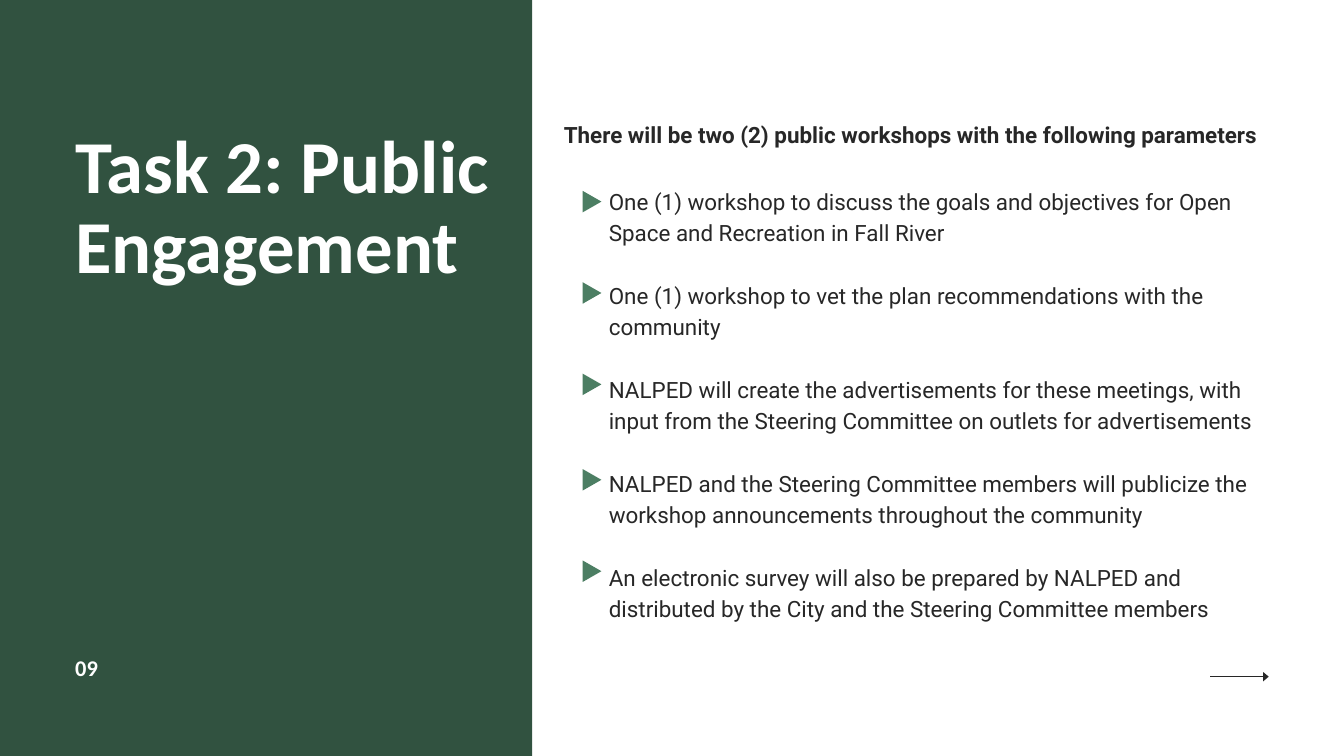
from dataclasses import dataclass
from lxml.etree import SubElement
from pptx import Presentation
from pptx.dml.color import RGBColor
from pptx.enum.shapes import MSO_CONNECTOR, MSO_SHAPE
from pptx.oxml.ns import qn
from pptx.util import Inches, Pt

WIDE, HIGH = Inches(20), Inches(11.25)
COL, ROW = WIDE / 80, HIGH / 45


@dataclass(frozen=True)
class Theme:
    """Colours, fonts, type sizes and line pitches."""
    panel: str = "315240"
    mark: str = "4C7E63"
    ink: str = "272727"
    paper: str = "FFFFFF"
    head: str = "Calibri"
    body: str = "Roboto"
    big: float = 80
    small: float = 24
    title: float = 85.6
    lead: float = 33.6
    page: float = 25.7


@dataclass(frozen=True)
class Box:
    """A box measured in grid columns and rows."""
    left: float
    top: float
    width: float
    height: float

    def inner(self, left, top, width, height):
        """Return a box placed from this box's corner."""
        return Box(self.left + left, self.top + top, width, height)

    def size(self):
        """Return left, top, width and height in slide units."""
        return (round(self.left * COL), round(self.top * ROW),
                round(self.width * COL), round(self.height * ROW))


THEME = Theme()
TITLE = "Task 2: Public Engagement"
LEAD = "There will be two (2) public workshops with the following parameters"
ITEMS = (
    "One (1) workshop to discuss the goals and objectives for Open Space and Recreation in Fall River",
    "One (1) workshop to vet the plan recommendations with the community",
    "NALPED will create the advertisements for these meetings, with input from the Steering Committee on outlets for advertisements",
    "NALPED and the Steering Committee members will publicize the workshop announcements throughout the community",
    "An electronic survey will also be prepared by NALPED and distributed by the City and the Steering Committee members",
)
MARKS = (11.44, 16.88, 22.32, 28, 33.44)


def add_text(slide, box, lines, font, size, pitch, color, bold=False, gap=0):
    """Write one paragraph per line at a fixed pitch."""
    frame = slide.shapes.add_textbox(*box.size()).text_frame
    frame.word_wrap = True
    frame.margin_left = frame.margin_right = 0
    frame.margin_top = frame.margin_bottom = 0
    for index, line in enumerate(lines):
        para = frame.add_paragraph() if index else frame.paragraphs[0]
        para.line_spacing = Pt(pitch)
        para.space_before = Pt(gap if index else 0)
        run = para.add_run()
        run.text = line
        run.font.name = font
        run.font.size = Pt(size)
        run.font.bold = bold
        run.font.color.rgb = RGBColor.from_string(color)


def add_block(slide, kind, box, color):
    """Draw a plain filled shape and return it."""
    shape = slide.shapes.add_shape(kind, *box.size())
    shape.shadow.inherit = False
    shape.fill.solid()
    shape.fill.fore_color.rgb = RGBColor.from_string(color)
    shape.line.fill.background()
    return shape


def add_arrow(slide, box, color):
    """Draw an arrow along the top edge of the box."""
    left, top, width, _ = box.size()
    line = slide.shapes.add_connector(
        MSO_CONNECTOR.STRAIGHT, left, top, left + width, top)
    line.line.color.rgb = RGBColor.from_string(color)
    line.line.width = Pt(1.5)
    props = line._element.spPr
    SubElement(props.find(qn("a:ln")), qn("a:tailEnd"),
               type="triangle", w="lg", len="med")
    SubElement(props, qn("a:effectLst"))


def add_side(slide, box):
    """Fill the green panel with title and page number."""
    add_block(slide, MSO_SHAPE.RECTANGLE, box, THEME.panel)
    add_text(slide, box.inner(4.48, 7.64, 27.16, 14.2), [TITLE],
             THEME.head, THEME.big, THEME.title, THEME.paper, True)
    add_text(slide, box.inner(4.48, 39.08, 3.08, 1.4), ["09"],
             THEME.head, THEME.small, THEME.page, THEME.paper, True)


def add_main(slide, box):
    """Place the lead line, marked list and arrow."""
    add_text(slide, box.inner(1.88, 6.96, 41.96, 1.76), [LEAD],
             THEME.body, THEME.small, THEME.lead, THEME.ink, True)
    add_text(slide, box.inner(4.56, 10.92, 39.28, 25.6), ITEMS,
             THEME.body, THEME.small, THEME.lead, THEME.ink, gap=THEME.lead)
    for top in MARKS:
        mark = add_block(slide, MSO_SHAPE.ISOSCELES_TRIANGLE,
                         box.inner(2.92, top, 1.28, 1.12), THEME.mark)
        mark.rotation = 90
    add_arrow(slide, box.inner(40.36, 40.28, 3.48, 0), THEME.ink)


def main():
    """Build and save the slide."""
    deck = Presentation()
    deck.slide_width, deck.slide_height = WIDE, HIGH
    slide = deck.slides.add_slide(deck.slide_layouts[6])
    slide.background.fill.solid()
    slide.background.fill.fore_color.rgb = RGBColor.from_string(THEME.paper)
    add_side(slide, Box(0, 0, 31.68, 45))
    add_main(slide, Box(31.68, 0, 48.32, 45))
    deck.save("out.pptx")


if __name__ == "__main__":
    main()
